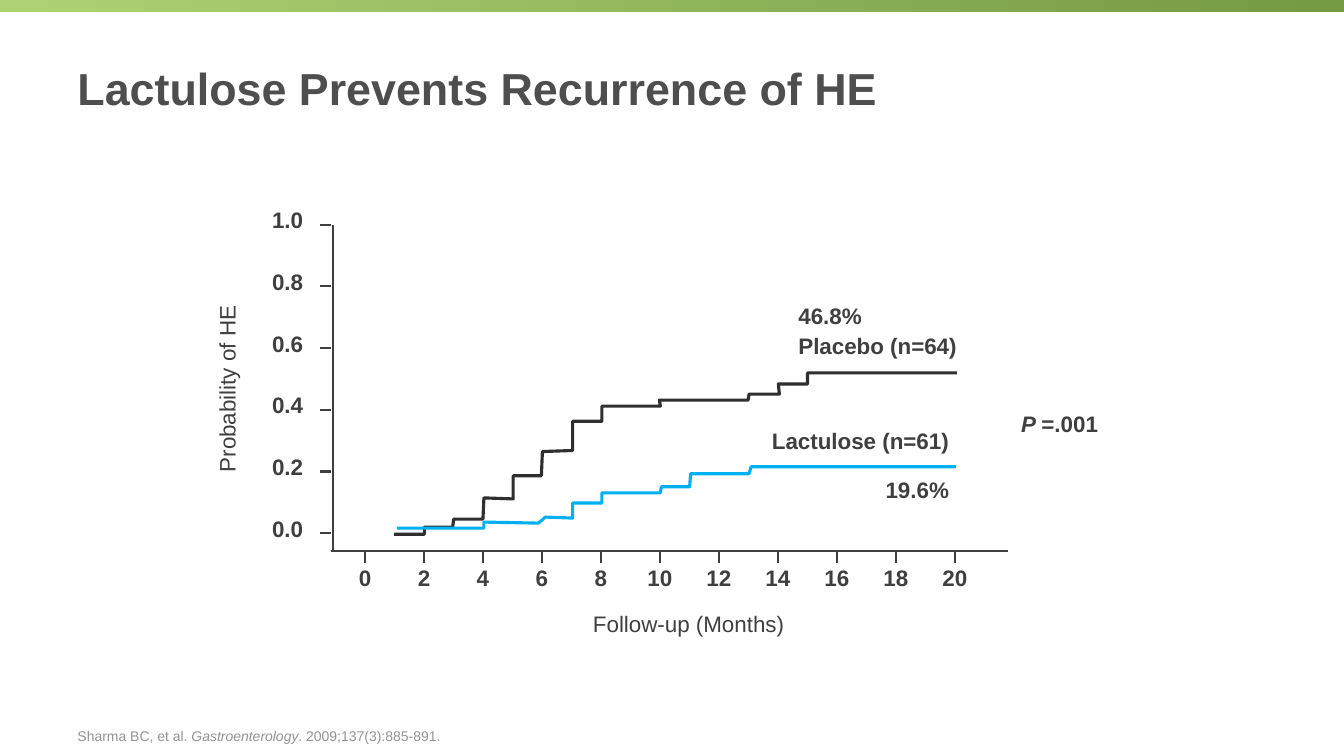
import pptx
import pptx.util
import pptx.dml.color
import pptx.enum.shapes
import pptx.enum.text
import pptx.oxml.ns
import lxml.etree

Inches = pptx.util.Inches
Pt = pptx.util.Pt
RGB = pptx.dml.color.RGBColor.from_string
ALIGN = pptx.enum.text.PP_ALIGN
ANCHOR = pptx.enum.text.MSO_ANCHOR

COLORS = {
    "bar_light": "ACD274", "bar_dark": "759A44", "title": "4D4E4D",
    "axis": "3F3F3F", "placebo": "2F2F2F", "lactulose": "00B0F0",
    "source": "939393",
}

prs = pptx.Presentation()
prs.slide_width = Inches(13.33)
prs.slide_height = Inches(7.5)
s = prs.slides.add_slide(prs.slide_layouts[6])


def add_text(at, runs, size=16, color="axis", bold=True, wrap=True,
             anchor=ANCHOR.TOP, **para):
    sp = s.shapes.add_textbox(*map(Inches, at))
    tf = sp.text_frame
    for name, value in {"word_wrap": wrap, "vertical_anchor": anchor}.items():
        setattr(tf, name, value)
    p = tf.paragraphs[0]
    for name, value in para.items():
        setattr(p, name, value)
    for text, italic in runs:
        r = p.add_run()
        r.text = text
        font = {"name": "Arial", "size": Pt(size), "bold": bold, "italic": italic}
        for name, value in font.items():
            setattr(r.font, name, value)
        r.font.color.rgb = RGB(COLORS[color])
    return sp


def add_line(x1, y1, x2, y2):
    c = s.shapes.add_connector(pptx.enum.shapes.MSO_CONNECTOR.STRAIGHT,
                               *map(Inches, (x1, y1, x2, y2)))
    c.line.color.rgb = RGB(COLORS["axis"])
    c.line.width = Pt(1.5)
    lxml.etree.SubElement(c._element.spPr, pptx.oxml.ns.qn("a:effectLst"))


bar = s.shapes.add_shape(pptx.enum.shapes.MSO_SHAPE.RECTANGLE,
                         0, 0, prs.slide_width, Inches(0.12))
bar.shadow.inherit = False
bar.line.fill.background()
bar.fill.gradient()
bar.fill.gradient_angle = 0
for stop, name in zip(bar.fill.gradient_stops, ("bar_light", "bar_dark")):
    stop.color.rgb = RGB(COLORS[name])

add_text((0.67, 0.22, 11.75, 1.3), [("Lactulose Prevents Recurrence of HE", False)],
         size=32, color="title", anchor=ANCHOR.MIDDLE)

y_title = add_text((1.33, 3.69, 1.87, 0.34), [("Probability of HE", False)],
                   bold=False, wrap=False, anchor=ANCHOR.BOTTOM,
                   alignment=ALIGN.CENTER, line_spacing=0.9)
y_title.rotation = 270
add_text((4.93, 6.04, 3.8, 0.33), [("Follow-up (Months)", False)],
         bold=False, alignment=ALIGN.CENTER, line_spacing=0.85)

add_line(3.3, 2.23, 3.3, 5.47)
add_line(3.28, 5.47, 10, 5.47)

for i in range(6):
    y = 5.29 - 0.612 * i
    add_line(3.17, y, 3.28, y)
    add_text((2.6, y - 0.23, 0.66, 0.37), [(f"{i * 0.2:.1f}", False)])

for i in range(11):
    x = 3.62 + 0.585 * i
    add_line(x, 5.48, x, 5.59)
    add_text((x - 0.33, 5.55, 0.66, 0.37), [(str(2 * i), False)],
             alignment=ALIGN.CENTER)

curves = {
    "placebo": [
        (3.91, 5.3), (4.21, 5.3), (4.21, 5.23), (4.49, 5.23), (4.5, 5.15),
        (4.79, 5.15), (4.8, 4.94), (5.09, 4.95), (5.09, 4.72), (5.37, 4.72),
        (5.38, 4.48), (5.68, 4.47), (5.68, 4.18), (5.97, 4.18), (5.97, 4.03),
        (6.55, 4.03), (6.54, 3.97), (7.42, 3.97), (7.43, 3.91), (7.73, 3.91),
        (7.72, 3.81), (8.01, 3.81), (8.01, 3.7), (9.49, 3.7)],
    "lactulose": [
        (3.94, 5.24), (4.8, 5.24), (4.8, 5.18), (5.34, 5.19), (5.41, 5.13),
        (5.68, 5.14), (5.68, 4.99), (5.97, 4.99), (5.97, 4.89), (6.55, 4.89),
        (6.56, 4.83), (6.84, 4.83), (6.85, 4.7), (7.43, 4.7), (7.45, 4.63),
        (9.48, 4.63)],
}
for name, points in curves.items():
    points = [(Inches(x), Inches(y)) for x, y in points]
    builder = s.shapes.build_freeform(*points[0])
    builder.add_line_segments(points[1:], close=False)
    sp = builder.convert_to_shape()
    sp.shadow.inherit = False
    sp.fill.background()
    sp.line.color.rgb = RGB(COLORS[name])
    sp.line.width = Pt(2.25)

for at, align, runs in [
    ((7.82, 2.95, 0.84, 0.37), ALIGN.LEFT, [("46.8%", False)]),
    ((7.82, 3.25, 1.79, 0.37), ALIGN.LEFT, [("Placebo (n=64)", False)]),
    ((7.53, 4.19, 1.98, 0.37), ALIGN.RIGHT, [("Lactulose (n=61)", False)]),
    ((8.67, 4.67, 0.84, 0.37), ALIGN.RIGHT, [("19.6%", False)]),
    ((10.03, 4.02, 0.97, 0.37), ALIGN.LEFT, [("P ", True), ("=.001", False)]),
]:
    add_text(at, runs, wrap=False, alignment=align)

add_text((0.67, 6.95, 11.75, 0.48),
         [("Sharma BC, et al. ", False), ("Gastroenterology", True),
          (". 2009;137(3):885-891.", False)],
         size=10, color="source", bold=False, anchor=ANCHOR.BOTTOM)

prs.save("out.pptx")
